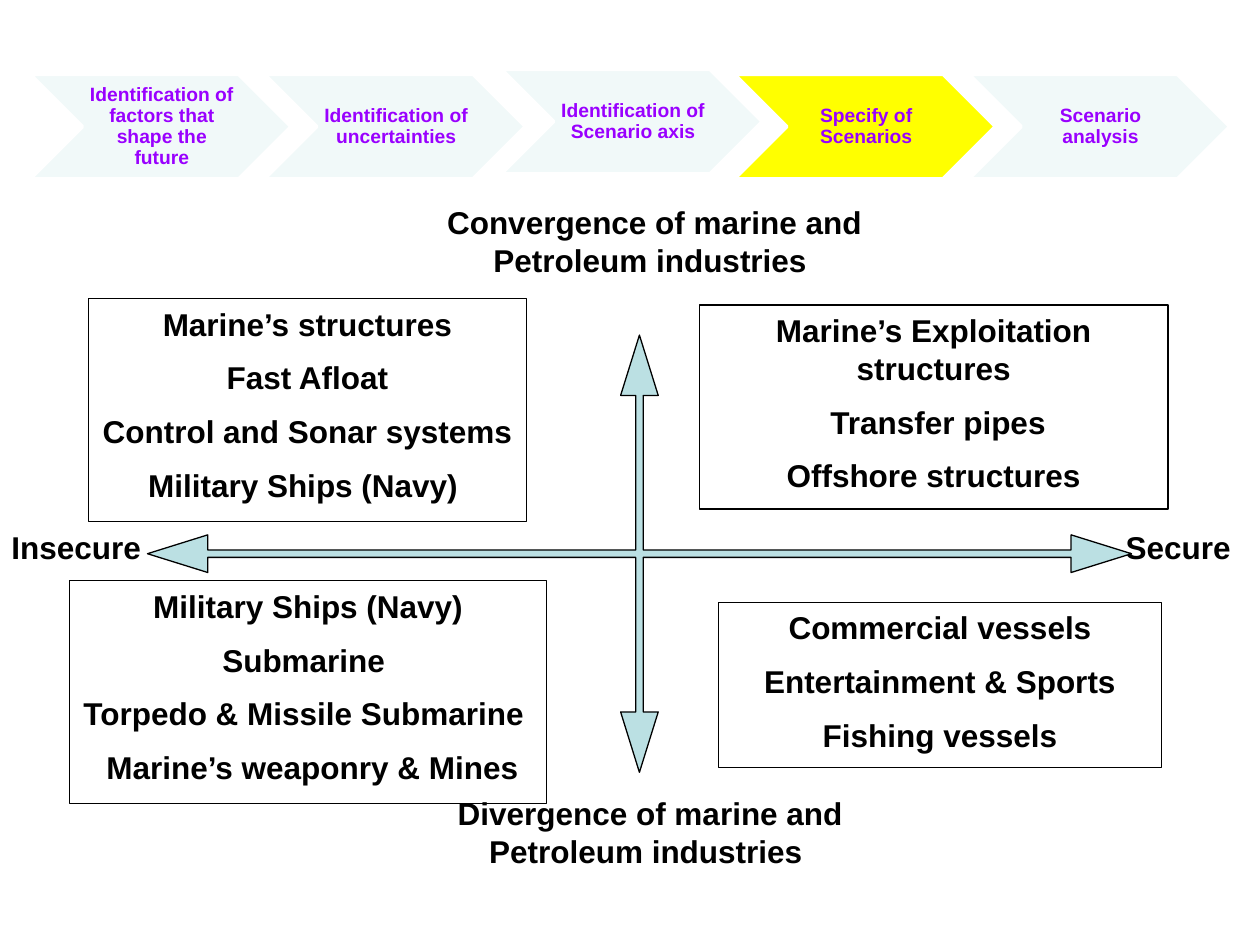
from pptx import Presentation
from pptx.dml.color import RGBColor
from pptx.enum.shapes import MSO_SHAPE
from pptx.enum.text import MSO_ANCHOR, PP_ALIGN
from pptx.util import Inches, Pt

BLACK = RGBColor(0x00, 0x00, 0x00)
WHITE = RGBColor(0xFF, 0xFF, 0xFF)
PURPLE = RGBColor(0x99, 0x00, 0xFF)
PALE = RGBColor(0xF1, 0xF9, 0xF9)
YELLOW = RGBColor(0xFF, 0xFF, 0x00)
AQUA = RGBColor(0xBB, 0xE0, 0xE3)
FONT = "Arial"


def write(frame, lines, size=18, color=BLACK, spacing=None, rtl_lines=0,
          anchor=MSO_ANCHOR.TOP, margins=(0.1, 0.05, 0.1, 0.05)):
    """Fill a frame with centred bold lines; the first rtl_lines run right to left."""
    frame.word_wrap = True
    frame.vertical_anchor = anchor
    (frame.margin_left, frame.margin_top,
     frame.margin_right, frame.margin_bottom) = map(Inches, margins)
    for i, line in enumerate(lines):
        paragraph = frame.add_paragraph() if i else frame.paragraphs[0]
        paragraph.alignment = PP_ALIGN.CENTER
        paragraph.line_spacing = spacing
        if i:
            paragraph.space_before = Pt(size / 2)
        if i < rtl_lines:
            paragraph._p.get_or_add_pPr().set("rtl", "1")
        run = paragraph.add_run()
        run.text = line
        run.font.name, run.font.size = FONT, Pt(size)
        run.font.bold = True
        run.font.color.rgb = color


class ScenarioSlide:
    def __init__(self, slide):
        self.slide = slide

    def shape(self, kind, box, fill=None, line=BLACK, width=0.75):
        shape = self.slide.shapes.add_shape(kind, *map(Inches, box))
        shape.shadow.inherit = False
        if fill is None:
            shape.fill.background()
        else:
            shape.fill.solid()
            shape.fill.fore_color.rgb = fill
        shape.line.color.rgb = line
        shape.line.width = Pt(width)
        return shape

    def label(self, box, text, **style):
        label = self.slide.shapes.add_textbox(*map(Inches, box))
        write(label.text_frame, [text], **style)

    def step(self, left, top, text, fill):
        self.shape(MSO_SHAPE.CHEVRON, (left, top, 2.07, 0.83), fill, WHITE, 2)
        self.label((left + 0.41, top, 1.24, 0.83), text, size=11, color=PURPLE,
                   spacing=0.9, anchor=MSO_ANCHOR.MIDDLE,
                   margins=(0.05, 0.02, 0.02, 0.02))

    def axes(self, box, adjustments):
        cross = self.shape(MSO_SHAPE.QUAD_ARROW_CALLOUT, box, AQUA)
        for i, value in enumerate(adjustments):
            cross.adjustments[i] = value

    def scenario(self, box, lines, rtl_lines=0):
        frame = self.shape(MSO_SHAPE.RECTANGLE, box).text_frame
        write(frame, lines, rtl_lines=rtl_lines)


def main():
    prs = Presentation()
    prs.slide_width, prs.slide_height = Inches(10), Inches(7.5)
    page = ScenarioSlide(prs.slides.add_slide(prs.slide_layouts[6]))

    # Process steps, with the current one highlighted
    steps = [
        (0.24, 0.59, "Identification of factors that shape the future", PALE),
        (2.1, 0.59, "Identification of uncertainties", PALE),
        (3.98, 0.55, "Identification of Scenario axis", PALE),
        (5.83, 0.59, "Specify of Scenarios", YELLOW),
        (7.69, 0.59, "Scenario analysis", PALE),
    ]
    for step in steps:
        page.step(*step)

    # Axis names and the crossed axes
    page.label((-0.08, 4.14, 1.37, 0.4), "Insecure", rtl_lines=1)
    page.label((8.78, 4.14, 1.14, 0.4), "Secure", rtl_lines=1)
    page.label((3.36, 1.56, 3.67, 0.71),
               "Convergence of marine and Petroleum industries ")
    page.label((3.52, 6.25, 3.28, 0.71),
               "Divergence of marine and Petroleum industries ")
    page.axes((1.17, 2.66, 7.81, 3.47), (0.017, 0.043, 0.138, 0.017))

    # Scenario of each quadrant
    page.scenario((5.7, 4.78, 3.52, 1.31),
                  ["Commercial vessels", "Entertainment & Sports",
                   "Fishing vessels"], rtl_lines=3)
    page.scenario((5.55, 2.42, 3.72, 1.62),
                  ["Marine’s Exploitation structures", "Transfer pipes ",
                   "Offshore structures"], rtl_lines=3)
    page.scenario((0.7, 2.37, 3.48, 1.77),
                  ["Marine’s structures", "Fast Afloat",
                   "Control and Sonar systems", "Military Ships (Navy) "],
                  rtl_lines=3)
    page.scenario((0.55, 4.61, 3.79, 1.77),
                  ["Military Ships (Navy)", "Submarine ",
                   "Torpedo & Missile Submarine ",
                   " Marine’s weaponry & Mines"])

    prs.save("out.pptx")


if __name__ == "__main__":
    main()
